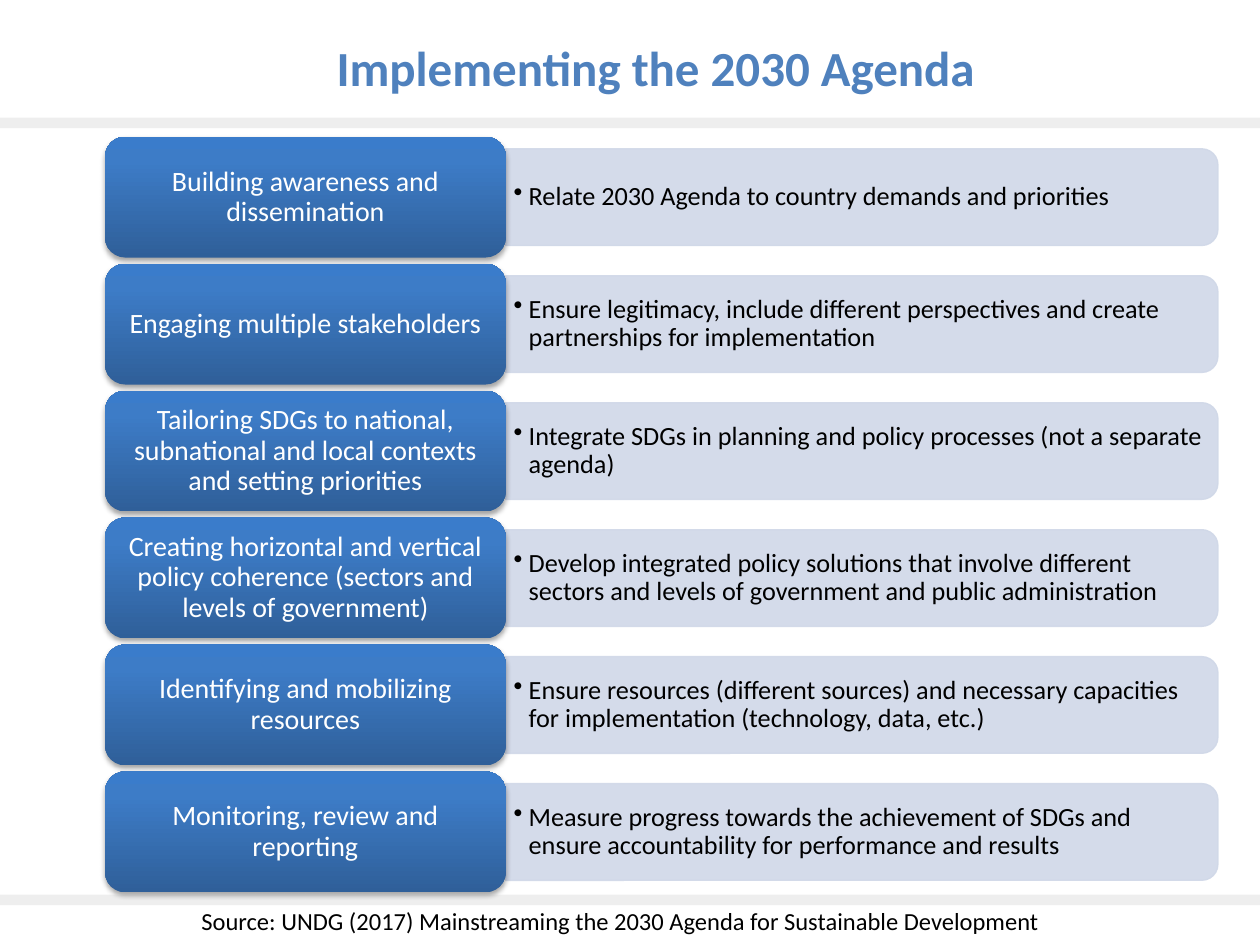
from dataclasses import dataclass

from lxml import etree
from pptx import Presentation
from pptx.dml.color import RGBColor
from pptx.enum.shapes import MSO_SHAPE
from pptx.enum.text import MSO_ANCHOR, PP_ALIGN
from pptx.oxml import parse_xml
from pptx.oxml.ns import nsdecls, qn
from pptx.util import Pt

RECT = MSO_SHAPE.RECTANGLE
ROUND = MSO_SHAPE.ROUNDED_RECTANGLE
TAB = MSO_SHAPE.ROUND_2_SAME_RECTANGLE
LEFT, CENTER = PP_ALIGN.LEFT, PP_ALIGN.CENTER
TOP, MIDDLE = MSO_ANCHOR.TOP, MSO_ANCHOR.MIDDLE


@dataclass(frozen=True)
class Theme:
    font: str = "Calibri"
    blue: str = "4F81BD"
    black: str = "000000"
    white: str = "FFFFFF"
    bar: str = "EEEEEE"
    panel: str = "D0D8E8"
    card: tuple = ((0, "2F5F99"), (80, "3D7CC7"), (100, "3A7CCB"))
    title: int = 28
    label: int = 16
    point: int = 15
    source: int = 14


@dataclass(frozen=True)
class Step:
    label: str
    point: str


@dataclass(frozen=True)
class Box:
    left: float
    top: float
    width: float
    height: float

    def place(self) -> list:
        return [Pt(v) for v in (self.left, self.top, self.width, self.height)]


THEME = Theme()
STEPS = (
    Step("Building awareness and dissemination",
         "Relate 2030 Agenda to country demands and priorities"),
    Step("Engaging multiple stakeholders",
         "Ensure legitimacy, include different perspectives and create "
         "partnerships for implementation"),
    Step("Tailoring SDGs to national, subnational and local contexts "
         "and setting priorities",
         "Integrate SDGs in planning and policy processes "
         "(not a separate agenda)"),
    Step("Creating horizontal and vertical policy coherence "
         "(sectors and levels of government)",
         "Develop integrated policy solutions that involve different "
         "sectors and levels of government and public administration"),
    Step("Identifying and mobilizing resources",
         "Ensure resources (different sources) and necessary capacities "
         "for implementation (technology, data, etc.)"),
    Step("Monitoring, review and reporting",
         "Measure progress towards the achievement of SDGs and ensure "
         "accountability for performance and results"),
)

# Row grid, in points
FIRST, PITCH = 78.1, 72.55
CARD = Box(60, 0, 229, 69.1)
PANEL = Box(289, 0, 407, 55.3)
TEXT = Box(289, 0, 404.5, 50)


def write(shape, text: str, size: int, color: str, align=LEFT, anchor=TOP,
          pads: tuple = (7.2, 3.6), spacing: float = 1.0,
          bullet: bool = False) -> None:
    """Fill a shape with one formatted paragraph."""
    frame = shape.text_frame
    side, edge = (Pt(v) for v in pads)
    look = dict(word_wrap=True, vertical_anchor=anchor, margin_left=side,
                margin_right=side, margin_top=edge, margin_bottom=edge)
    for name, value in look.items():
        setattr(frame, name, value)
    para = frame.paragraphs[0]
    para.text = text
    para.alignment, para.line_spacing = align, spacing
    if bullet:
        props = para._p.get_or_add_pPr()
        props.set("marL", str(Pt(8.64)))
        props.set("indent", str(-Pt(8.64)))
        etree.SubElement(props, qn("a:buChar"), char="•")
        para.level = 1
    font = para.runs[0].font
    style = dict(name=THEME.font, size=Pt(size), bold=size == THEME.title)
    for name, value in style.items():
        setattr(font, name, value)
    font.color.rgb = RGBColor.from_string(color)


def block(slide, kind, box: Box, color: str):
    """Add a plain shape without line or shadow."""
    shape = slide.shapes.add_shape(kind, *box.place())
    shape.shadow.inherit = False
    shape.fill.solid()
    shape.fill.fore_color.rgb = RGBColor.from_string(color)
    shape.line.fill.background()
    return shape


def center(box: Box, mid: float) -> Box:
    return Box(box.left, mid - box.height / 2, box.width, box.height)


def panel(slide, mid: float) -> None:
    """Add the pale panel: an upright tab turned a quarter to the right."""
    turn = Box(PANEL.left + (PANEL.width - PANEL.height) / 2,
               mid - PANEL.width / 2, PANEL.height, PANEL.width)
    shape = block(slide, TAB, turn, THEME.panel)
    shape.rotation = 90
    shape.line.color.rgb = RGBColor.from_string(THEME.panel)
    shape.line.width = Pt(0.75)
    for color in shape._element.spPr.iter(qn("a:srgbClr")):
        etree.SubElement(color, qn("a:alpha"), val="90000")


def card(slide, mid: float, text: str) -> None:
    """Add the blue label card with its gradient and soft shadow."""
    shape = block(slide, ROUND, center(CARD, mid), THEME.blue)
    props = shape._element.spPr
    stops = "".join(f'<a:gs pos="{pos * 1000}"><a:srgbClr val="{color}"/></a:gs>'
                    for pos, color in THEME.card)
    props.replace(props.find(qn("a:solidFill")), parse_xml(
        f'<a:gradFill {nsdecls("a")} rotWithShape="1"><a:gsLst>{stops}</a:gsLst>'
        '<a:lin ang="16200000" scaled="0"/></a:gradFill>'))
    props.find(qn("a:effectLst")).append(parse_xml(
        f'<a:outerShdw {nsdecls("a")} blurRad="{Pt(3.1)}" dist="{Pt(1.8)}" '
        f'dir="5400000" rotWithShape="0"><a:srgbClr val="{THEME.black}">'
        '<a:alpha val="35000"/></a:srgbClr></a:outerShdw>'))
    write(shape, text, THEME.label, THEME.white, CENTER, MIDDLE, (4.8, 2.4), 0.9)


def row(slide, mid: float, step: Step) -> None:
    panel(slide, mid)
    note = slide.shapes.add_textbox(*center(TEXT, mid).place())
    write(note, step.point, THEME.point, THEME.black, LEFT, MIDDLE,
          (4.5, 2.25), 0.9, True)
    card(slide, mid, step.label)


def main() -> None:
    deck = Presentation()
    deck.slide_width, deck.slide_height = Pt(720), Pt(540)
    slide = deck.slides.add_slide(deck.slide_layouts[5])

    # Title
    title = slide.shapes.title
    spots = ("left", "top", "width", "height")
    for name, value in zip(spots, Box(47.7, 18, 653.8, 41.2).place()):
        setattr(title, name, value)
    write(title, "Implementing the 2030 Agenda", THEME.title, THEME.blue, CENTER)

    # Bars above and below the rows
    for top in (67.2, 511.2):
        block(slide, RECT, Box(0, top, 720, 6), THEME.bar)

    # Rows
    for i, step in enumerate(STEPS):
        row(slide, FIRST + i * PITCH + CARD.height / 2, step)

    # Source line
    source = slide.shapes.add_textbox(*Box(108, 514.2, 540, 24.2).place())
    write(source, "Source: UNDG (2017) Mainstreaming the 2030 Agenda for "
          "Sustainable Development", THEME.source, THEME.black)

    deck.save("out.pptx")


if __name__ == "__main__":
    main()
